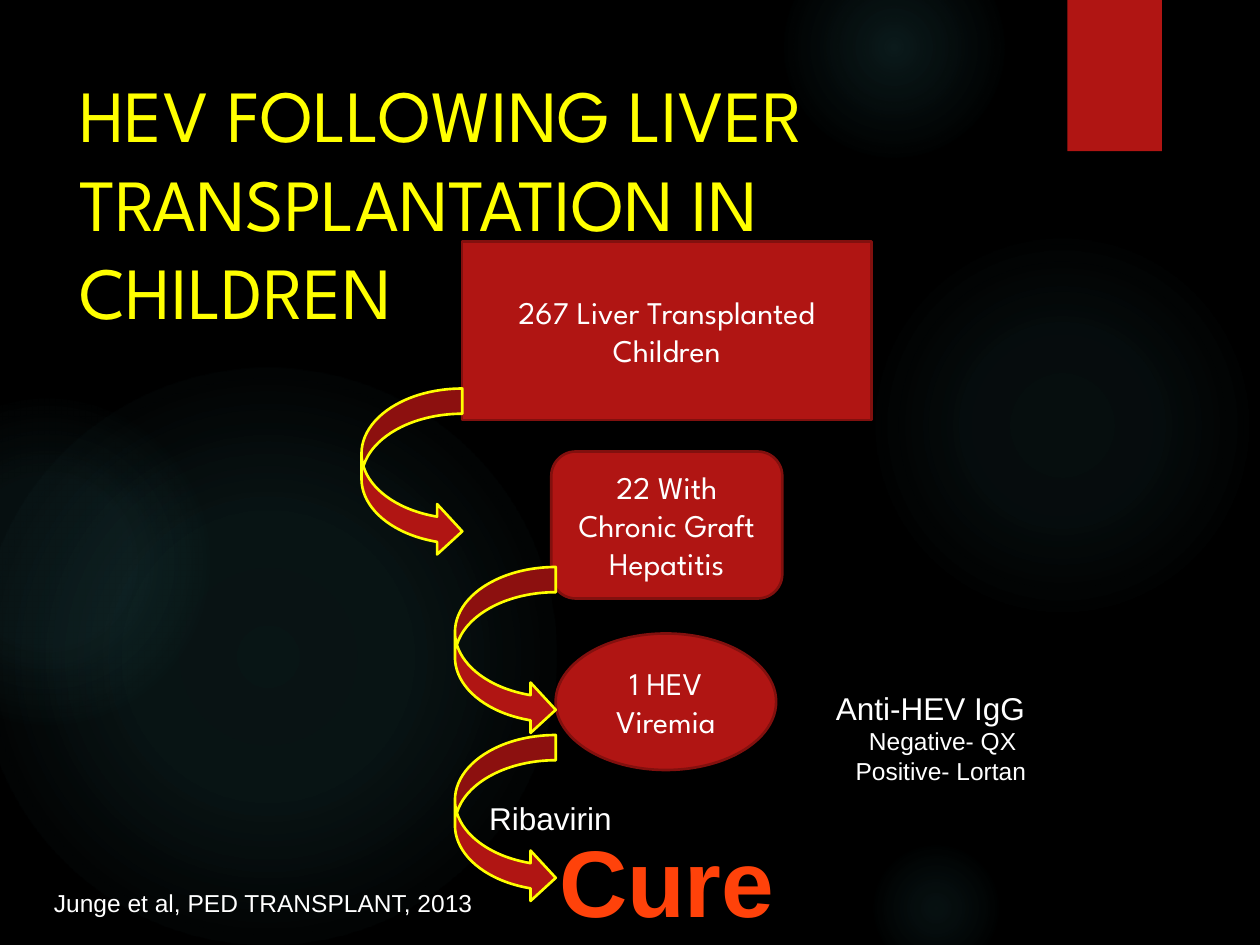
from dataclasses import dataclass

from pptx import Presentation
from pptx.dml.color import RGBColor
from pptx.enum.shapes import MSO_SHAPE as Shape
from pptx.enum.text import MSO_ANCHOR as Anchor, MSO_AUTO_SIZE as AutoSize, PP_ALIGN as Align
from pptx.oxml import parse_xml
from pptx.oxml.ns import nsdecls
from pptx.util import Pt


@dataclass(frozen=True)
class Theme:
    background: str = "000000"
    glow: str = "50B9C1"
    red: str = "B01513"
    dark_red: str = "82100E"
    yellow: str = "FFFF00"
    white: str = "FFFFFF"
    orange: str = "FF420A"
    display_font: str = "League Spartan"
    text_font: str = "Arial"
    title_size: int = 42
    cure_size: int = 54
    label_size: int = 18
    note_size: int = 14


class SlideBuilder:
    def __init__(self, slide, theme):
        self.slide = slide
        self.theme = theme
        backdrop = slide.background.fill
        backdrop.solid()
        backdrop.fore_color.rgb = RGBColor.from_string(theme.background)

    def format(self, paragraph, size, color, font, align=Align.CENTER, bold=False):
        paragraph.alignment = align
        paragraph.font.size = Pt(size)
        paragraph.font.name = font
        paragraph.font.bold = bold
        paragraph.font.color.rgb = RGBColor.from_string(color)

    def shape(self, kind, box, fill=None, line=None):
        shape = self.slide.shapes.add_shape(kind, *map(Pt, box))
        shape.shadow.inherit = False
        if fill:
            shape.fill.solid()
            shape.fill.fore_color.rgb = RGBColor.from_string(fill)
        else:
            shape.fill.background()
        if line:
            shape.line.color.rgb = RGBColor.from_string(line)
            shape.line.width = Pt(1.5)
        else:
            shape.line.fill.background()
        return shape

    def glow(self, left, top, size, stops):
        shape = self.shape(Shape.OVAL, (left, top, size, size))
        stop_xml = "".join(
            f'<a:gs pos="{position * 1000}"><a:srgbClr val="{self.theme.glow}">'
            f'<a:alpha val="{alpha * 1000}"/></a:srgbClr></a:gs>'
            for position, alpha in stops
        )
        gradient = parse_xml(
            f'<a:gradFill {nsdecls("a")} rotWithShape="1"><a:gsLst>{stop_xml}</a:gsLst>'
            '<a:path path="circle"><a:fillToRect l="50000" t="50000" r="50000" b="50000"/>'
            "</a:path></a:gradFill>"
        )
        properties = shape.element.spPr
        properties.replace(properties.find("{*}noFill"), gradient)

    def title(self, text, box):
        title = self.slide.shapes.title
        title.left, title.top, title.width, title.height = map(Pt, box)
        title.text = text
        frame = title.text_frame
        frame.auto_size = AutoSize.NONE
        frame.vertical_anchor = Anchor.TOP
        theme = self.theme
        self.format(frame.paragraphs[0], theme.title_size, theme.yellow,
                    theme.display_font, Align.LEFT)

    def step(self, kind, box, text):
        theme = self.theme
        frame = self.shape(kind, box, theme.red, theme.dark_red).text_frame
        frame.text = text
        frame.word_wrap = True
        frame.vertical_anchor = Anchor.MIDDLE
        self.format(frame.paragraphs[0], theme.label_size, theme.white, theme.display_font)

    def arrow(self, left, top):
        self.shape(Shape.CURVED_RIGHT_ARROW, (left, top, 57.6, 96),
                   self.theme.red, self.theme.yellow)

    def label(self, box, lines, color=None, bold=False):
        frame = self.slide.shapes.add_textbox(*map(Pt, box)).text_frame
        frame.word_wrap = True
        frame.margin_left = frame.margin_right = 0
        for index, (text, size, indent) in enumerate(lines):
            paragraph = frame.add_paragraph() if index else frame.paragraphs[0]
            paragraph.text = text
            self.format(paragraph, size, color or self.theme.white, self.theme.text_font, bold=bold)
            if indent:
                paragraph._p.get_or_add_pPr().set("marL", str(Pt(indent)))


def main():
    theme = Theme()
    deck = Presentation()
    deck.slide_width, deck.slide_height = Pt(720), Pt(540)
    builder = SlideBuilder(deck.slides.add_slide(deck.slide_layouts[5]), theme)

    glows = [
        (496, 132, 222, [(0, 7), (36, 6), (69, 0)]),
        (448, -36, 126, [(0, 14), (36, 7), (73, 0)]),
        (496, 480, 78, [(0, 9), (36, 5), (66, 0)]),
        (-12, 210, 330, [(0, 11), (36, 10), (75, 0)]),
        (-66, 228, 186, [(0, 8), (36, 8), (72, 0)]),
    ]
    for glow in glows:
        builder.glow(*glow)
    builder.shape(Shape.RECTANGLE, (610, 0, 54, 86.4), theme.red)
    builder.title("HEV FOLLOWING LIVER TRANSPLANTATION IN CHILDREN", (38.2, 36, 556, 110))

    steps = [
        (Shape.RECTANGLE, (264, 138, 234, 102), "267 Liver Transplanted Children"),
        (Shape.ROUNDED_RECTANGLE, (315, 258, 132, 84), "22 With Chronic Graft Hepatitis"),
        (Shape.OVAL, (317.5, 362, 126, 78), "1 HEV Viremia"),
    ]
    for step in steps:
        builder.step(*step)

    builder.label((285, 467, 192, 73), [("Cure", theme.cure_size, 0)], theme.orange, bold=True)
    for left, top in [(206.6, 222), (260, 324), (260, 420)]:
        builder.arrow(left, top)

    builder.label((272, 453, 85, 29), [("Ribavirin", theme.label_size, 0)])
    builder.label((468, 390, 127.4, 68), [
        ("Anti-HEV IgG", theme.label_size, 0),
        ("Negative- QX", theme.note_size, 14),
        ("Positive- Lortan", theme.note_size, 12),
    ])
    builder.label((23, 504, 255, 24.5),
                  [("Junge et al, PED TRANSPLANT, 2013", theme.note_size, 0)])
    deck.save("out.pptx")


if __name__ == "__main__":
    main()
